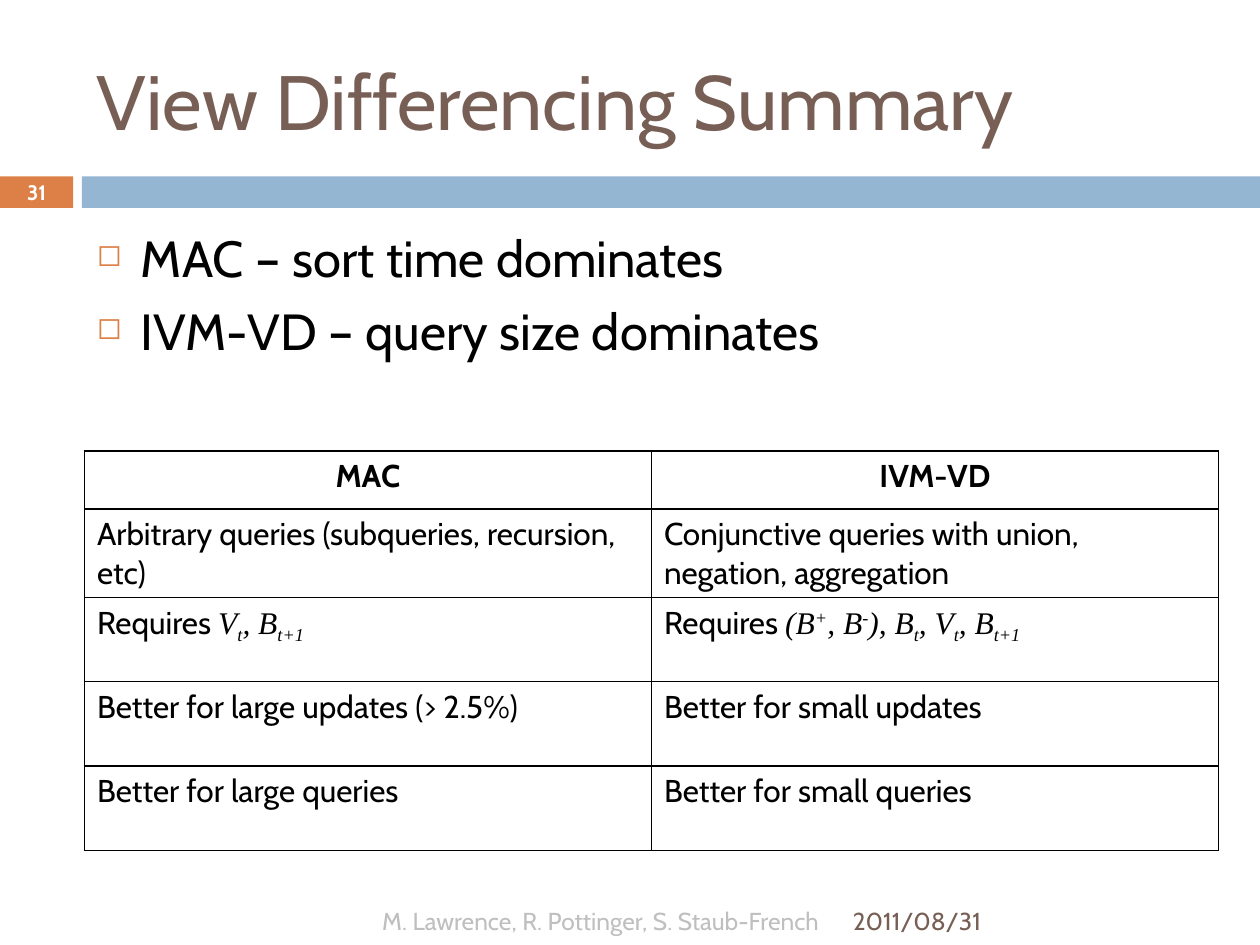
from lxml.etree import SubElement
from pptx import Presentation
from pptx.dml.color import RGBColor
from pptx.enum.shapes import MSO_SHAPE
from pptx.enum.text import MSO_ANCHOR, PP_ALIGN
from pptx.oxml import parse_xml
from pptx.oxml.ns import nsdecls, qn
from pptx.util import Inches, Pt

COLORS = {
    "title": "775F55",
    "orange": "DD8047",
    "blue": "94B6D2",
    "text": "000000",
    "footer": "BFBFBF",
    "white": "FFFFFF",
}
FONT = "Cabin"
MATH = {"name": "Times New Roman", "italic": True}
STYLES = {
    "plain": ({}, 0),
    "math": (MATH, 0),
    "sub": (MATH, -25000),
    "sup": (MATH, 30000),
}
BULLETS = ["MAC – sort time dominates", "IVM-VD – query size dominates"]
ROWS = [
    ("MAC", "IVM-VD"),
    (
        "Arbitrary queries (subqueries, recursion, etc)",
        "Conjunctive queries with union, negation, aggregation",
    ),
    (
        [("Requires ", "plain"), ("V", "math"), ("t", "sub"), (", B", "math"), ("t+1", "sub")],
        [
            ("Requires ", "plain"), ("(B", "math"), ("+", "sup"), (", B", "math"),
            ("-", "sup"), ("), B", "math"), ("t", "sub"), (", V", "math"),
            ("t", "sub"), (", B", "math"), ("t+1", "sub"),
        ],
    ),
    ("Better for large updates (> 2.5%)", "Better for small updates"),
    ("Better for large queries", "Better for small queries"),
]


def add_run(paragraph, text, size, color, style="plain", **extra):
    """Append a formatted run to a paragraph."""
    run = paragraph.add_run()
    run.text = text
    overrides, baseline = STYLES[style]
    formats = {"name": FONT, "size": Pt(size), **overrides, **extra}
    for attribute, value in formats.items():
        setattr(run.font, attribute, value)
    run.font.color.rgb = RGBColor.from_string(COLORS[color])
    if baseline:
        run._r.get_or_add_rPr().set("baseline", str(baseline))


def add_text_frame(slide, left, top, width, height, anchor=MSO_ANCHOR.MIDDLE):
    """Add a wrapping text box and return its text frame."""
    shape = slide.shapes.add_textbox(Inches(left), Inches(top), Inches(width), Inches(height))
    formats = {"word_wrap": True, "vertical_anchor": anchor}
    for attribute, value in formats.items():
        setattr(shape.text_frame, attribute, value)
    return shape.text_frame


def add_label(slide, box, text, size, color, alignment=PP_ALIGN.LEFT, **extra):
    """Add one line of text, centred vertically in its box."""
    paragraph = add_text_frame(slide, *box).paragraphs[0]
    paragraph.alignment = alignment
    add_run(paragraph, text, size, color, **extra)


def add_band(slide, left, top, width, height, number):
    """Draw the number block and the bar to its right."""
    block, gap = 0.58, 0.07
    bar_left = left + block + gap
    parts = [(left, block, "orange"), (bar_left, left + width - bar_left, "blue")]
    for part_left, part_width, color in parts:
        shape = slide.shapes.add_shape(
            MSO_SHAPE.RECTANGLE, Inches(part_left), Inches(top), Inches(part_width), Inches(height)
        )
        shape.shadow.inherit = False
        shape.fill.solid()
        shape.fill.fore_color.rgb = RGBColor.from_string(COLORS[color])
        shape.line.fill.background()
    add_label(slide, (left, top, block, height), number, 12, "white", PP_ALIGN.CENTER, bold=True)


def add_bullets(slide, left, top, width, height):
    """Add the list with hollow square bullets."""
    frame = add_text_frame(slide, left, top, width, height, MSO_ANCHOR.TOP)
    for index, text in enumerate(BULLETS):
        paragraph = frame.add_paragraph() if index else frame.paragraphs[0]
        paragraph.space_before = Pt(7)
        add_run(paragraph, text, 29, "text")
        properties = paragraph._p.get_or_add_pPr()
        properties.set("marL", str(Inches(0.35)))
        properties.set("indent", str(-Inches(0.35)))
        bullet_color = SubElement(properties, qn("a:buClr"))
        SubElement(bullet_color, qn("a:srgbClr"), val=COLORS["orange"])
        SubElement(properties, qn("a:buSzPct"), val="60000")
        SubElement(properties, qn("a:buChar"), char="◻")


def add_borders(cell):
    """Draw thin lines on all four sides of a cell."""
    properties = cell._tc.get_or_add_tcPr()
    for index, side in enumerate("LRTB"):
        line = parse_xml(
            f'<a:ln{side} {nsdecls("a")} w="{Pt(1)}"><a:solidFill>'
            f'<a:srgbClr val="{COLORS["text"]}"/></a:solidFill></a:ln{side}>'
        )
        properties.insert(index, line)


def add_comparison(slide, left, top, width, header_height, row_height):
    """Add the table that compares the two methods."""
    height = header_height + row_height * (len(ROWS) - 1)
    table = slide.shapes.add_table(
        len(ROWS), len(ROWS[0]), Inches(left), Inches(top), Inches(width), Inches(height)
    ).table
    table.first_row = table.horz_banding = False
    for row_index, texts in enumerate(ROWS):
        is_header = row_index == 0
        table.rows[row_index].height = Inches(header_height if is_header else row_height)
        for column_index, content in enumerate(texts):
            cell = table.cell(row_index, column_index)
            cell.fill.background()
            add_borders(cell)
            paragraph = cell.text_frame.paragraphs[0]
            paragraph.alignment = PP_ALIGN.CENTER if is_header else PP_ALIGN.LEFT
            pieces = [(content, "plain")] if isinstance(content, str) else content
            for text, style in pieces:
                add_run(paragraph, text, 18, "text", style, bold=is_header)


def add_footer(slide, left, top, width, height):
    """Add the authors and the date."""
    authors_width, date_offset = 5.93, 6
    add_label(
        slide, (left, top, authors_width, height),
        "M. Lawrence, R. Pottinger, S. Staub-French", 14, "footer", PP_ALIGN.RIGHT,
    )
    date_box = (left + date_offset, top, width - date_offset, height)
    add_label(slide, date_box, "2011/08/31", 14, "title")


def main():
    """Build and save the slide."""
    presentation = Presentation()
    presentation.slide_width, presentation.slide_height = Inches(10), Inches(7.5)
    slide = presentation.slides.add_slide(presentation.slide_layouts[6])
    margin, width = 0.67, 8.92
    add_band(slide, 0, 1.4, 10, 0.25, "31")
    add_label(slide, (margin, 0.25, width, 1.08), "View Differencing Summary", 44, "title")
    add_bullets(slide, margin, 1.75, width, 4.92)
    add_comparison(slide, margin, 3.58, 9, 0.46, 0.67)
    add_footer(slide, margin, 7.11, width, 0.4)
    presentation.save("out.pptx")


if __name__ == "__main__":
    main()
